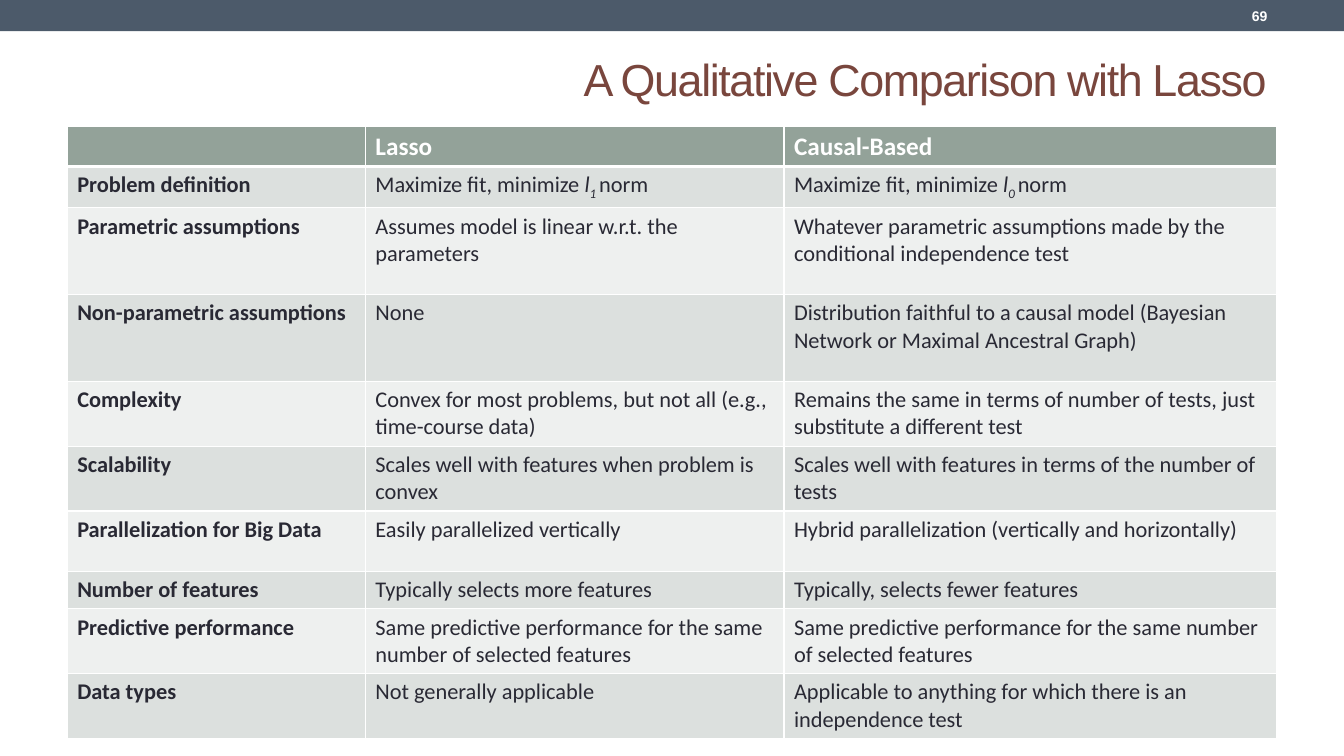
from lxml import etree
from pptx import Presentation
from pptx.dml.color import RGBColor
from pptx.enum import shapes, text
from pptx.oxml import ns
from pptx.util import Pt

COLORS = {
    "white": "FFFFFF",
    "bar": "4C5A6A",
    "title": "79463D",
    "header": "93A299",
    "odd": "DCE0DE",
    "even": "EEF0EF",
    "ink": "292934",
}

COLUMN_WIDTHS = [213, 299, 352]
ROW_HEIGHTS = [28, 29.5, 62, 62, 46.4, 46.4, 43.2, 26.5, 46.4, 46.4]


def norm_definition(order):
    """Runs as (text, italic, subscript)."""
    return [("Maximize fit, minimize ", False, False), ("l", True, False),
            (f"{order} ", True, True), ("norm", False, False)]


ROWS = [
    ["", "Lasso", "Causal-Based"],
    ["Problem definition", norm_definition(1), norm_definition(0)],
    ["Parametric assumptions",
     "Assumes model is linear w.r.t. the parameters",
     "Whatever parametric assumptions made by the conditional independence test"],
    ["Non-parametric assumptions", "None",
     "Distribution faithful to a causal model "
     "(Bayesian Network or Maximal Ancestral Graph)"],
    ["Complexity",
     "Convex for most problems, but not all (e.g., time-course data)",
     "Remains the same in terms of number of tests, just substitute a different test"],
    ["Scalability",
     "Scales well with features when problem is convex",
     "Scales well with features in terms of the number of tests"],
    ["Parallelization for Big Data",
     "Easily parallelized vertically",
     "Hybrid parallelization (vertically and horizontally)"],
    ["Number of features",
     "Typically selects more features",
     "Typically, selects fewer features"],
    ["Predictive performance",
     "Same predictive performance for the same number of selected features",
     "Same predictive performance for the same number of selected features"],
    ["Data types", "Not generally applicable",
     "Applicable to anything for which there is an independence test"],
]


def color(name):
    return RGBColor.from_string(COLORS[name])


def style_run(run, font_name, size, color_name, bold=False):
    run.font.name = font_name
    run.font.size = Pt(size)
    run.font.bold = bold
    run.font.color.rgb = color(color_name)


def add_right_text(slide, box, words, size, color_name, bold=False):
    shape = slide.shapes.add_textbox(*map(Pt, box))
    frame = shape.text_frame
    frame.text = words
    frame.word_wrap = True
    frame.vertical_anchor = text.MSO_ANCHOR.MIDDLE
    paragraph = frame.paragraphs[0]
    paragraph.alignment = text.PP_ALIGN.RIGHT
    run = paragraph.runs[0]
    style_run(run, "Arial", size, color_name, bold)
    return run


def add_top_bar(slide, box):
    left, top, width, height = box
    bar = slide.shapes.add_shape(shapes.MSO_SHAPE.RECTANGLE, *map(Pt, box))
    bar.shadow.inherit = False
    bar.fill.solid()
    bar.fill.fore_color.rgb = color("bar")
    bar.line.fill.background()
    # Page number
    add_right_text(slide, (left + width - 160, top + 1.4, 112.4, 20),
                   "69", 10, "white", bold=True)


def add_title(slide, box):
    run = add_right_text(slide, box, "A Qualitative Comparison with Lasso", 32, "title")
    run._r.get_or_add_rPr().set("spc", "-100")


def set_borders(cell, widths):
    properties = cell._tc.get_or_add_tcPr()
    for side, width in widths.items():
        line = etree.SubElement(properties, ns.qn(f"a:ln{side}"), w=str(Pt(width)))
        fill = etree.SubElement(line, ns.qn("a:solidFill"))
        etree.SubElement(fill, ns.qn("a:srgbClr"), val=COLORS["white"])


def fill_cell(cell, content, size, color_name, bold):
    paragraph = cell.text_frame.paragraphs[0]
    if isinstance(content, str):
        paragraph.text = content
    else:
        for words, italic, subscript in content:
            run = paragraph.add_run()
            run.text = words
            run.font.italic = italic
            if subscript:
                run._r.get_or_add_rPr().set("baseline", "-25000")
    for run in paragraph.runs:
        style_run(run, "Calibri", size, color_name, bold)


def add_comparison_table(slide, box):
    frame = slide.shapes.add_table(len(ROWS), len(COLUMN_WIDTHS), *map(Pt, box))
    table = frame.table
    for column, width in zip(table.columns, COLUMN_WIDTHS):
        column.width = Pt(width)
    for row, height in zip(table.rows, ROW_HEIGHTS):
        row.height = Pt(height)
    for i, contents in enumerate(ROWS):
        header = i == 0
        band = "header" if header else ("odd" if i % 2 else "even")
        borders = {"L": 1, "R": 1, "T": 3 if i == 1 else 1, "B": 3 if header else 1}
        for j, content in enumerate(contents):
            cell = table.cell(i, j)
            set_borders(cell, borders)
            cell.fill.solid()
            cell.fill.fore_color.rgb = color(band)
            fill_cell(cell, content, 18 if header else 16,
                      "white" if header else "ink", header or j == 0)


def main():
    presentation = Presentation()
    presentation.slide_width = Pt(960)
    presentation.slide_height = Pt(540)
    slide = presentation.slides.add_slide(presentation.slide_layouts[6])
    add_top_bar(slide, (0, 0, 960, 22.3))
    add_title(slide, (48, 30.5, 864, 51))
    add_comparison_table(slide, (48, 90, sum(COLUMN_WIDTHS), sum(ROW_HEIGHTS)))
    presentation.save("out.pptx")


if __name__ == "__main__":
    main()
